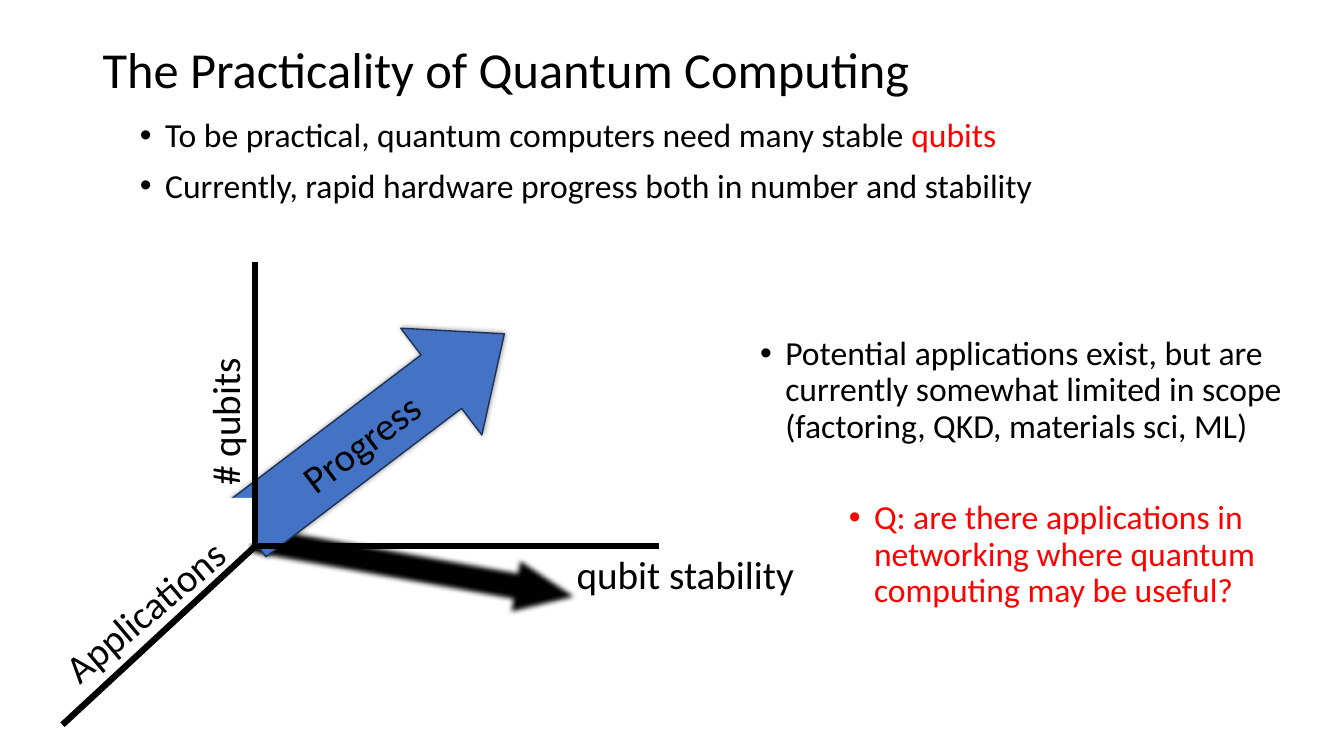
from pptx import Presentation
from pptx.dml.color import RGBColor
from pptx.enum.shapes import MSO_CONNECTOR, MSO_SHAPE
from pptx.enum.text import MSO_ANCHOR
from pptx.oxml import parse_xml
from pptx.oxml.ns import nsdecls
from pptx.oxml.xmlchemy import OxmlElement
from pptx.util import Pt

PX = 9144  # 100 px to the inch
BLACK = RGBColor(0x00, 0x00, 0x00)
WHITE = RGBColor(0xFF, 0xFF, 0xFF)
RED = RGBColor(0xFF, 0x00, 0x00)
BLUE = RGBColor(0x44, 0x72, 0xC4)
NAVY = RGBColor(0x1E, 0x32, 0x56)
ORIGIN = (253, 542)


def scale(*sizes):
    return [size * PX for size in sizes]


def style(run, size, color):
    run.font.name = "Calibri"
    run.font.size = Pt(size)
    run.font.color.rgb = color


def add_text(slide, box, text, size=28, turn=0):
    shape = slide.shapes.add_textbox(*scale(*box))
    shape.rotation = turn
    frame = shape.text_frame
    frame.word_wrap = True
    frame.text = text
    style(frame.paragraphs[0].runs[0], size, BLACK)
    return frame


def add_title(slide, box, text):
    frame = add_text(slide, box, text, 36)
    frame.vertical_anchor = MSO_ANCHOR.BOTTOM
    frame.paragraphs[0].line_spacing = 0.9


def add_bullets(slide, box, items):
    """Add a bulleted box; each item is a list of (text, colour) parts."""
    frame = slide.shapes.add_textbox(*scale(*box)).text_frame
    frame.word_wrap = True
    for i, parts in enumerate(items):
        para = frame.paragraphs[0] if i == 0 else frame.add_paragraph()
        para.line_spacing = 0.9
        para.space_before = Pt(10)
        props = para._p.get_or_add_pPr()
        props.set("marL", str(25 * PX))
        props.set("indent", str(-25 * PX))
        font = OxmlElement("a:buFont")
        font.set("typeface", "Arial")
        mark = OxmlElement("a:buChar")
        mark.set("char", "•")
        props.extend([font, mark])
        for text, color in parts:
            run = para.add_run()
            run.text = text
            style(run, 24, color)


def add_block(slide, kind, box, fill):
    shape = slide.shapes.add_shape(kind, *scale(*box))
    shape.shadow.inherit = False
    shape.fill.solid()
    shape.fill.fore_color.rgb = fill
    shape.line.fill.background()
    return shape


def add_arrow(slide, box, turn, head, fill):
    shape = add_block(slide, MSO_SHAPE.RIGHT_ARROW, box, fill)
    shape.rotation = turn
    shape.adjustments[1] = head
    return shape


def cast_shadow(shape, drop, alpha):
    """Cast a black shadow, drop points straight down, alpha percent opaque."""
    effects = shape._element.spPr.find("{*}effectLst")
    effects.append(parse_xml(
        f'<a:outerShdw {nsdecls("a")} blurRad="{Pt(4)}" dist="{Pt(drop)}" '
        f'dir="5400000" algn="ctr" rotWithShape="0"><a:srgbClr val="000000">'
        f'<a:alpha val="{alpha * 1000}"/></a:srgbClr></a:outerShdw>'))


def add_axis(slide, end):
    line = slide.shapes.add_connector(
        MSO_CONNECTOR.STRAIGHT, *scale(*end, *ORIGIN))
    line.line.color.rgb = BLACK
    line.line.width = Pt(4.5)
    line._element.spPr.append(OxmlElement("a:effectLst"))


def main():
    deck = Presentation()
    deck.slide_width, deck.slide_height = scale(1333, 750)
    slide = deck.slides.add_slide(deck.slide_layouts[6])

    floor = add_arrow(slide, (249, 473, 322, 50), 10, 1.16, WHITE)
    cast_shadow(floor, 47, 100)
    add_axis(slide, (62, 719))
    add_text(slide, (36, 576, 218, 57), "Applications", turn=319.8)
    add_title(slide, (92, 12, 881, 92), "The Practicality of Quantum Computing")

    growth = add_arrow(slide, (211, 362, 322, 133), 322.8, 0.59, BLUE)
    growth.line.color.rgb = NAVY
    growth.line.width = Pt(1)
    cast_shadow(growth, 0, 43)

    add_bullets(slide, (744, 329, 562, 144), [[
        ("Potential applications exist, but are currently somewhat limited "
         "in scope (factoring, QKD, materials sci, ML)", BLACK)]])
    add_bullets(slide, (832, 492, 562, 144), [[
        ("Q: are there applications in networking where quantum computing "
         "may be useful?", RED)]])
    add_text(slide, (274, 391, 218, 57), "Progress", turn=322.7)

    add_block(slide, MSO_SHAPE.RECTANGLE, (220, 494, 30, 45), WHITE)
    add_text(slide, (562, 541, 296, 57), "qubit stability")
    add_axis(slide, (253, 260))
    add_axis(slide, (654, 542))
    add_text(slide, (115, 355, 216, 57), "# qubits", turn=270)

    add_bullets(slide, (129, 113, 907, 144), [
        [("To be practical, quantum computers need many stable ", BLACK),
         ("qubits", RED)],
        [("Currently, rapid hardware progress both in number and stability",
          BLACK)]])
    deck.save("out.pptx")


if __name__ == "__main__":
    main()
